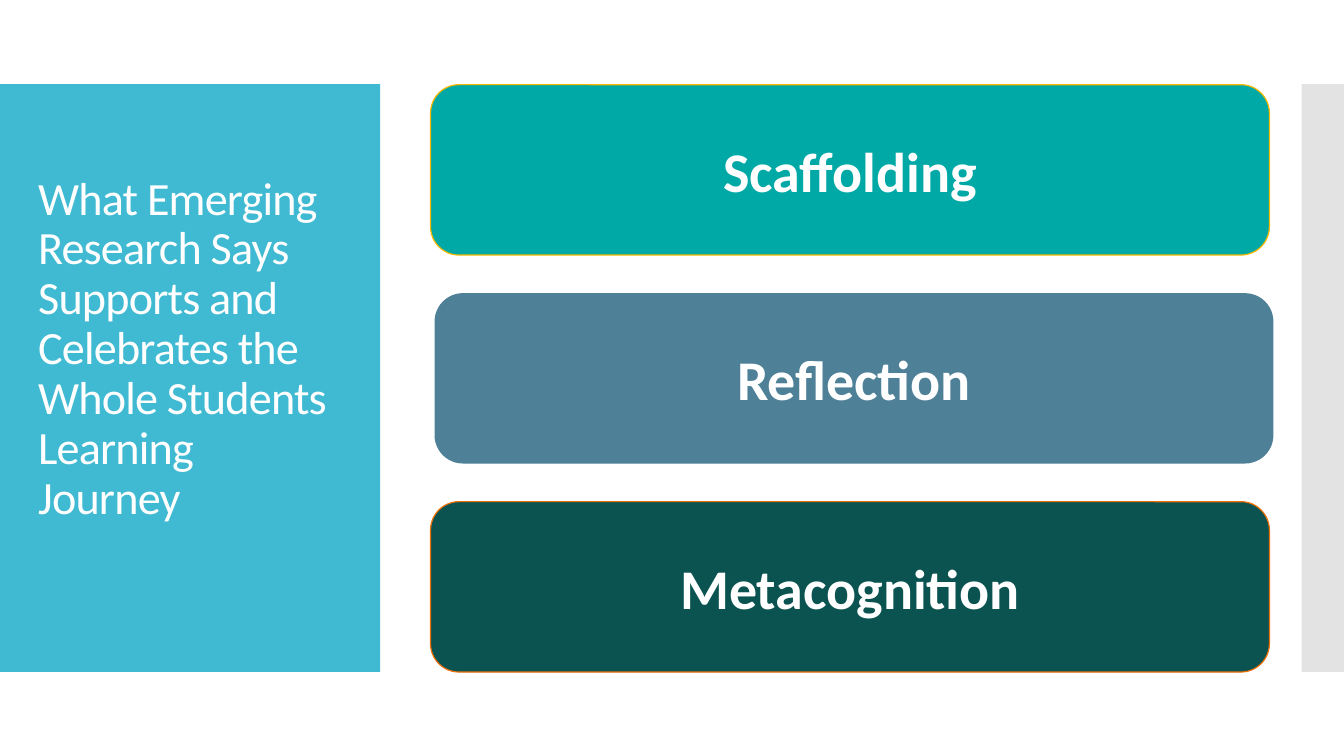
"""Build a slide with a title panel and three learning-support cards."""
import pptx
import pptx.dml.color
import pptx.enum.shapes
import pptx.enum.text
import pptx.util
from lxml import etree

WIDTH, HEIGHT = 13.33, 7.5
TITLE = "What Emerging Research Says Supports and Celebrates the Whole Students Learning Journey "
CARDS = [
    ("Scaffolding", "00A9A5", "FAB900", 0),
    ("Reflection", "4E8098", None, 0.04),
    ("Metacognition", "0B5351", "EE7008", 0),
]
BAND_TOP, BAND_HEIGHT = HEIGHT / 9, HEIGHT * 7 / 9
PANEL_WIDTH, STRIP_WIDTH = 3.77, 0.42
CARD_LEFT, CARD_TOP, CARD_WIDTH, CARD_HEIGHT = 4.27, 0.84, 8.32, 1.69
CARD_PITCH = (BAND_TOP + BAND_HEIGHT - CARD_HEIGHT - CARD_TOP) / (len(CARDS) - 1)
SHAPES = pptx.enum.shapes.MSO_SHAPE
ALIGN = pptx.enum.text.PP_ALIGN


def color(value):
    return pptx.dml.color.RGBColor.from_string(value)


def inches(*lengths):
    return [pptx.util.Inches(length) for length in lengths]


def add_block(slide, kind, box, fill, line=None, opacity=None):
    shape = slide.shapes.add_shape(kind, *inches(*box))
    shape.shadow.inherit = False
    shape.fill.solid()
    shape.fill.fore_color.rgb = color(fill)
    if line:
        shape.line.color.rgb = color(line)
        shape.line.width = pptx.util.Pt(0.85)
    else:
        shape.line.fill.background()
    if opacity:
        tint = shape.fill._xPr.find(".//" + pptx.oxml.ns.qn("a:srgbClr"))
        etree.SubElement(tint, pptx.oxml.ns.qn("a:alpha")).set("val", str(opacity * 1000))
    return shape


def write(shape, text, size, bold=False, align=ALIGN.LEFT, line_spacing=None, tracking=None):
    frame = shape.text_frame
    frame.word_wrap = True
    frame.vertical_anchor = pptx.enum.text.MSO_ANCHOR.MIDDLE
    paragraph = frame.paragraphs[0]
    paragraph.alignment = align
    paragraph.line_spacing = line_spacing
    run = paragraph.add_run()
    run.text = text
    run.font.name = "Calibri"
    run.font.size = pptx.util.Pt(size)
    run.font.bold = bold
    run.font.color.rgb = color("FFFFFF")
    if tracking:
        run.font._element.set("spc", str(int(tracking * 100)))
    return paragraph


def main():
    presentation = pptx.Presentation()
    presentation.slide_width, presentation.slide_height = inches(WIDTH, HEIGHT)
    slide = presentation.slides.add_slide(presentation.slide_layouts[6])
    add_block(slide, SHAPES.RECTANGLE, (0, BAND_TOP, PANEL_WIDTH, BAND_HEIGHT), "40BAD2")
    strip = (WIDTH - STRIP_WIDTH, BAND_TOP, STRIP_WIDTH, BAND_HEIGHT)
    add_block(slide, SHAPES.RECTANGLE, strip, "C8C8C8", opacity=50)
    title = slide.shapes.add_textbox(*inches(0.28, 1.23, 3.22, 5.03))
    paragraph = write(title, TITLE, 33, line_spacing=0.9, tracking=-0.6)
    paragraph.add_line_break()
    paragraph.font.size = pptx.util.Pt(33)
    for row, (label, fill, line, shift) in enumerate(CARDS):
        box = (CARD_LEFT + shift, CARD_TOP + row * CARD_PITCH, CARD_WIDTH, CARD_HEIGHT)
        card = add_block(slide, SHAPES.ROUNDED_RECTANGLE, box, fill, line)
        write(card, label, 40, bold=True, align=ALIGN.CENTER)
    presentation.save("out.pptx")


if __name__ == "__main__":
    main()
